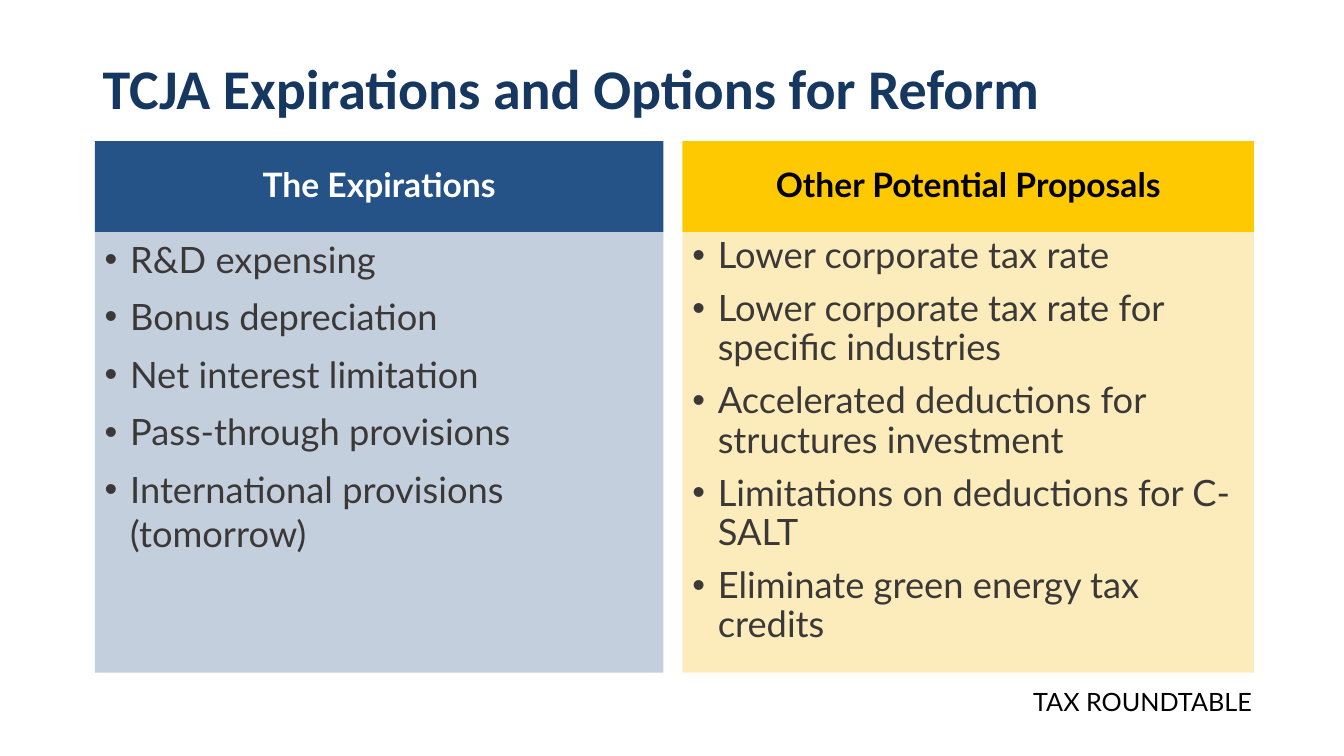
from lxml.etree import SubElement
from pptx import Presentation
from pptx.dml.color import RGBColor as RGB
from pptx.enum.shapes import MSO_SHAPE as SHAPE
from pptx.enum.text import MSO_ANCHOR as ANCHOR, PP_ALIGN as ALIGN
from pptx.oxml.ns import qn
from pptx.util import Cm, Pt

COLORS = {
    "title": "163860", "black": "000000", "white": "FFFFFF", "body": "3B3838",
    "blue": "255387", "pale_blue": "C4CFDD",
    "yellow": "FFC900", "pale_yellow": "FCECBC",
}
TITLE = {"name": "Calibri", "size": Pt(40), "bold": True}
HEADING = {"name": "Lato", "size": Pt(24), "bold": True}
BODY = {"name": "Lato", "size": Pt(25.9), "bold": False}
FOOTER = {"name": "Lato", "size": Pt(18), "bold": False}
INDENT = Cm(0.64)
HEADER_H = 2.29

COLUMNS = [
    {"box": (2.39, 3.56, 14.33, 13.39), "heading": "The Expirations",
     "fills": ("blue", "pale_blue"), "color": "white", "spacing": 1.0,
     "items": ["R&D expensing", "Bonus depreciation", "Net interest limitation",
               "Pass-through provisions", "International provisions (tomorrow)"]},
    {"box": (17.2, 3.56, 14.4, 13.39), "heading": "Other Potential Proposals",
     "fills": ("yellow", "pale_yellow"), "color": "black", "spacing": 0.9,
     "items": ["Lower corporate tax rate",
               "Lower corporate tax rate for specific industries",
               "Accelerated deductions for structures investment",
               "Limitations on deductions for C-SALT",
               "Eliminate green energy tax credits"]},
]


def add_bullet(p):
    pPr = p._p.get_or_add_pPr()
    pPr.set("marL", str(INDENT))
    pPr.set("indent", str(-INDENT))
    SubElement(pPr, qn("a:buFont")).set("typeface", "Arial")
    SubElement(pPr, qn("a:buChar")).set("char", "•")


def write(sp, lines, font, color, align=ALIGN.LEFT, anchor=ANCHOR.TOP,
          spacing=0.9, bullets=False):
    tf = sp.text_frame
    tf.word_wrap = True
    tf.vertical_anchor = anchor
    for i, line in enumerate(lines):
        p = tf.add_paragraph() if i else tf.paragraphs[0]
        if bullets:
            add_bullet(p)
        layout = {"alignment": align, "line_spacing": spacing,
                  "space_before": Pt(10 if i else 0)}
        for key, value in layout.items():
            setattr(p, key, value)
        r = p.add_run()
        r.text = line
        for key, value in font.items():
            setattr(r.font, key, value)
        r.font.color.rgb = RGB.from_string(COLORS[color])


def add_panel(slide, box, fill):
    sp = slide.shapes.add_shape(SHAPE.RECTANGLE, *map(Cm, box))
    sp.shadow.inherit = False
    sp.fill.solid()
    sp.fill.fore_color.rgb = RGB.from_string(COLORS[fill])
    sp.line.fill.background()
    return sp


def add_title(slide, box):
    sp = slide.shapes.add_textbox(*map(Cm, box))
    write(sp, ["TCJA Expirations and Options for Reform"], TITLE, "title",
          anchor=ANCHOR.MIDDLE)


def add_column(slide, box, heading, fills, color, spacing, items):
    x, y, w, h = box
    head = add_panel(slide, (x, y, w, HEADER_H), fills[0])
    write(head, [heading], HEADING, color, ALIGN.CENTER, ANCHOR.MIDDLE)
    body = add_panel(slide, (x, y + HEADER_H, w, h - HEADER_H), fills[1])
    write(body, items, BODY, "body", spacing=spacing, bullets=True)


def add_footer(slide, box):
    sp = slide.shapes.add_textbox(*map(Cm, box))
    sp.text_frame.margin_left = sp.text_frame.margin_right = 0
    write(sp, ["TAX ROUNDTABLE"], FOOTER, "black", ALIGN.RIGHT, spacing=1.0)


def main():
    prs = Presentation()
    prs.slide_width, prs.slide_height = Cm(33.87), Cm(19.05)
    slide = prs.slides.add_slide(prs.slide_layouts[6])
    add_footer(slide, (24.31, 17.17, 7.24, 1.02))
    add_title(slide, (2.34, 0.46, 29.21, 3.68))
    for column in COLUMNS:
        add_column(slide, **column)
    prs.save("out.pptx")


if __name__ == "__main__":
    main()
